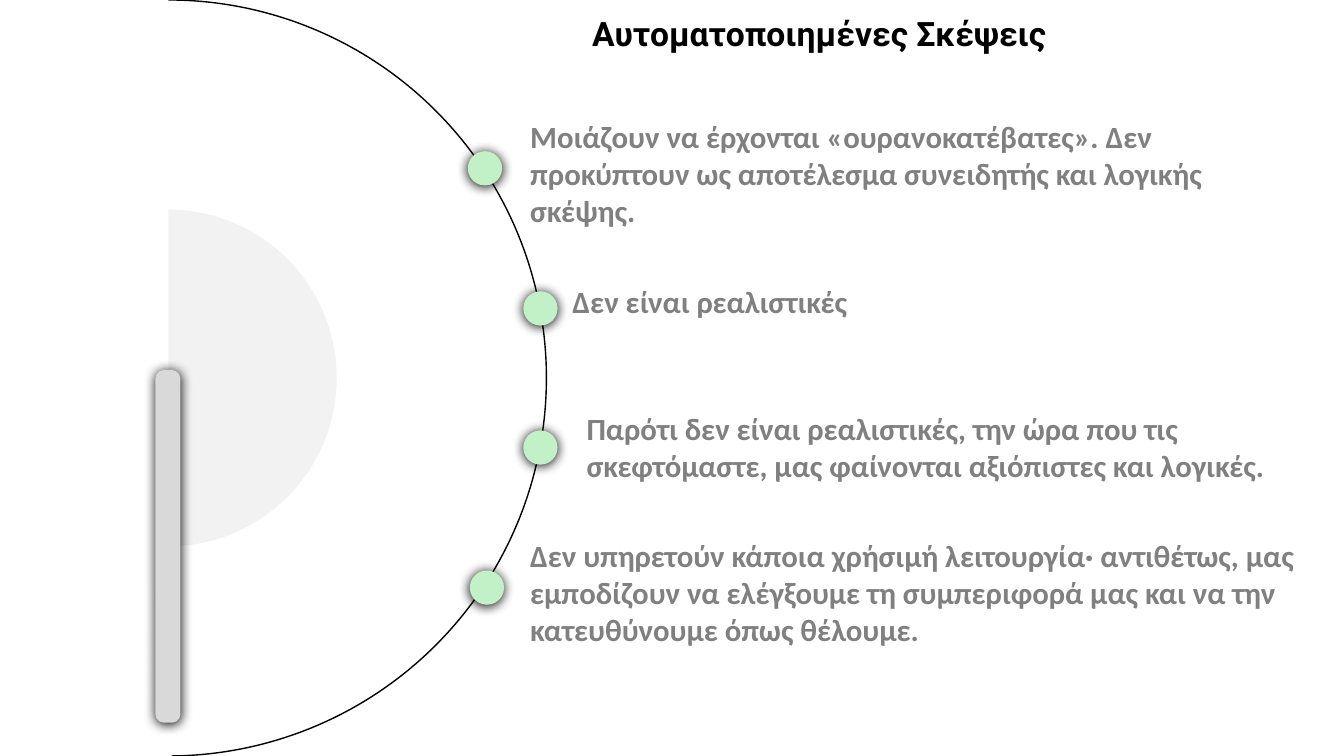
"""Build the slide on automatic thoughts: a half circle with four marked statements."""

from dataclasses import dataclass

import lxml.etree
import pptx
import pptx.dml.color
import pptx.enum.shapes
import pptx.enum.text
import pptx.oxml.ns
import pptx.util

PX = 9144
SHAPE = pptx.enum.shapes.MSO_SHAPE
ALIGN = pptx.enum.text.PP_ALIGN


@dataclass(frozen=True)
class Theme:
    ink: str = "000000"
    body: str = "808080"
    dot: str = "C2F1C8"
    half_disc: str = "F2F2F2"
    bar: str = "D9D9D9"
    title_font: str = "Roboto"
    body_font: str = "Calibri"
    title_size: int = 24
    body_size: int = 22
    line_width: int = 1


@dataclass(frozen=True)
class Area:
    left: int
    top: int
    width: int
    height: int


@dataclass(frozen=True)
class Statement:
    dot_left: int
    dot_top: int
    area: Area
    text: str


@dataclass(frozen=True)
class HalfCircle:
    radius: int
    end_angle: float
    fill: str | None
    line: str | None


THEME = Theme()
CENTER_X, CENTER_Y = 167, 375
DOT_SIZE = 34
ARC_START = 162

HALF_CIRCLES = (
    HalfCircle(375, 53.709, None, THEME.ink),
    HalfCircle(167, 53.598, THEME.half_disc, None),
)
STATEMENTS = (
    Statement(464, 150, Area(516, 112, 792, 121),
              "Μοιάζουν να έρχονται «ουρανοκατέβατες». ∆εν προκύπτουν ως "
              "αποτέλεσμα συνειδητής και λογικής σκέψης."),
    Statement(519, 289, Area(558, 276, 770, 47), "∆εν είναι ρεαλιστικές"),
    Statement(519, 427, Area(572, 402, 756, 84),
              "Παρότι δεν είναι ρεαλιστικές, την ώρα που τις σκεφτόμαστε, "
              "µας φαίνονται αξιόπιστες και λογικές."),
    Statement(466, 566, Area(516, 528, 786, 121),
              "∆εν υπηρετούν κάποια χρήσιμή λειτουργία· αντιθέτως, µας "
              "εμποδίζουν να ελέγξουμε τη συμπεριφορά µας και να την "
              "κατευθύνουμε όπως θέλουμε."),
)


def color(code: str) -> pptx.dml.color.RGBColor:
    return pptx.dml.color.RGBColor.from_string(code)


def place(area: Area) -> tuple[int, ...]:
    return tuple(n * PX for n in (area.left, area.top, area.width, area.height))


def add_figure(page, kind, area: Area, fill: str | None, line: str | None = None):
    figure = page.shapes.add_shape(kind, *place(area))
    figure.shadow.inherit = False
    if fill:
        figure.fill.solid()
        figure.fill.fore_color.rgb = color(fill)
    else:
        figure.fill.background()
    if line:
        figure.line.color.rgb = color(line)
        figure.line.width = pptx.util.Pt(THEME.line_width)
    else:
        figure.line.fill.background()
    return figure


def add_glow_shadow(figure) -> None:
    qn = pptx.oxml.ns.qn
    effects = figure.element.spPr.find(qn("a:effectLst"))
    shadow = lxml.etree.SubElement(
        effects, qn("a:outerShdw"), blurRad=str(pptx.util.Pt(8.5)),
        dist=str(pptx.util.Pt(1)), dir="5400000", algn="ctr", rotWithShape="0")
    lxml.etree.SubElement(shadow, qn("a:srgbClr"), val=THEME.ink)


def add_text(page, area: Area, text: str, font: str, size: int, ink: str, align=None) -> None:
    frame = page.shapes.add_textbox(*place(area)).text_frame
    frame.word_wrap = True
    frame.auto_size = pptx.enum.text.MSO_AUTO_SIZE.SHAPE_TO_FIT_TEXT
    para = frame.paragraphs[0]
    para.text = text
    para.alignment = align
    para.font.name = font
    para.font.size = pptx.util.Pt(size)
    para.font.bold = True
    para.font.color.rgb = color(ink)


def add_half_circle(page, half: HalfCircle) -> None:
    area = Area(CENTER_X - half.radius, CENTER_Y - half.radius, 2 * half.radius, 2 * half.radius)
    arc = add_figure(page, SHAPE.ARC, area, half.fill, half.line)
    arc.adjustments[0] = ARC_START
    arc.adjustments[1] = half.end_angle


def add_statement(page, item: Statement) -> None:
    add_text(page, item.area, item.text, THEME.body_font, THEME.body_size, THEME.body)
    dot = Area(item.dot_left, item.dot_top, DOT_SIZE, DOT_SIZE)
    add_glow_shadow(add_figure(page, SHAPE.OVAL, dot, THEME.dot))


def main() -> None:
    deck = pptx.Presentation()
    deck.slide_width, deck.slide_height = 1333 * PX, 750 * PX
    page = deck.slides.add_slide(deck.slide_layouts[6])
    for half in HALF_CIRCLES:
        add_half_circle(page, half)
    for item in STATEMENTS:
        add_statement(page, item)
    bar = add_figure(page, SHAPE.ROUNDED_RECTANGLE, Area(154, 367, 25, 350), THEME.bar)
    bar.adjustments[0] = 0.35
    bar.rotation = 180
    add_glow_shadow(bar)
    add_text(page, Area(393, 8, 839, 50), "Αυτοματοποιημένες Σκέψεις",
             THEME.title_font, THEME.title_size, THEME.ink, ALIGN.CENTER)
    deck.save("out.pptx")


if __name__ == "__main__":
    main()
